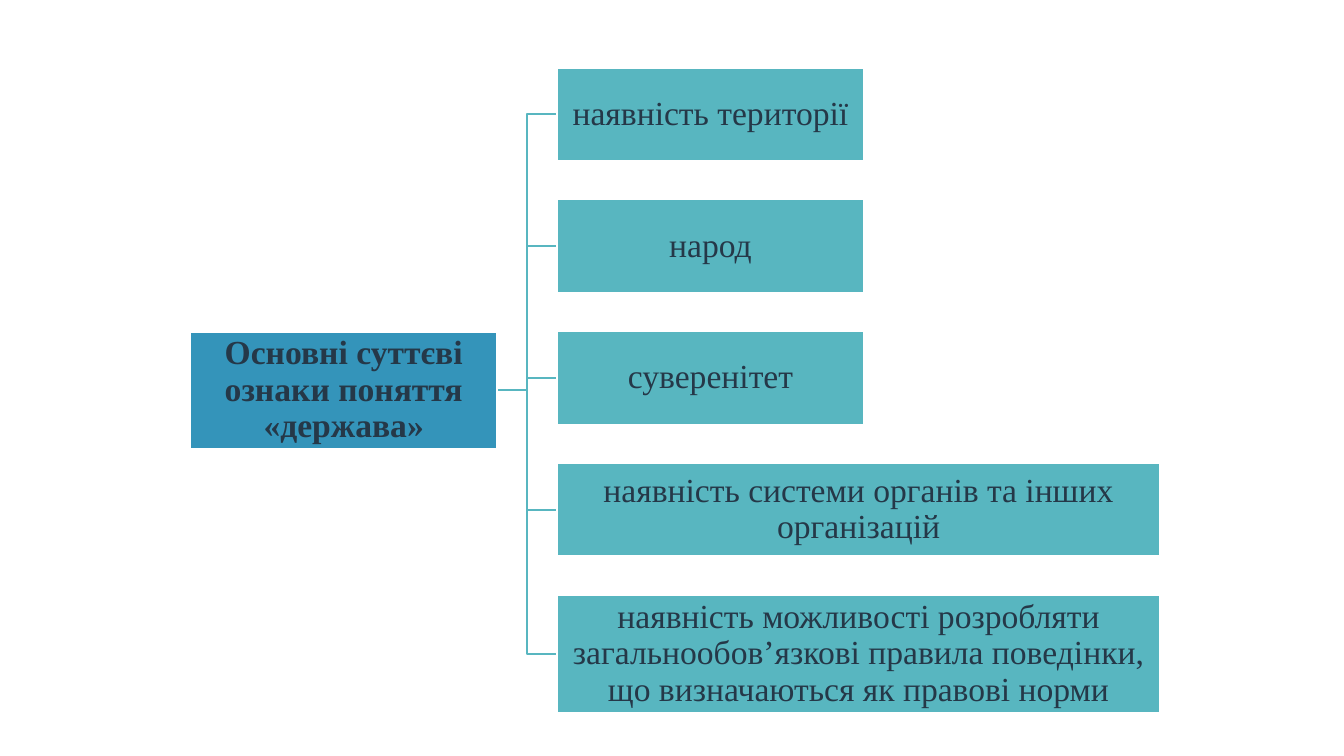
from pptx import Presentation
from pptx.dml.color import RGBColor
from pptx.enum.shapes import MSO_SHAPE as Shape
from pptx.enum.text import MSO_ANCHOR as Anchor, PP_ALIGN as Align
from pptx.util import Pt

ROOT = "Основні суттєві ознаки поняття «держава»"
# text, width, height
SIGNS = [
    ("наявність території", 219, 67),
    ("народ", 219, 67),
    ("суверенітет", 219, 67),
    ("наявність системи органів та інших організацій", 430.5, 67),
    ("наявність можливості розробляти загальнообов’язкові правила поведінки, "
     "що визначаються як правові норми", 430.5, 85),
]

BLUE = RGBColor(0x34, 0x94, 0xBA)
TEAL = RGBColor(0x58, 0xB6, 0xC0)
DARK = RGBColor(0x25, 0x38, 0x48)
WHITE = RGBColor(0xFF, 0xFF, 0xFF)

ROOT_X, ROOT_Y, ROOT_W, ROOT_H = 136, 237, 219, 83.5
SIGN_X, SIGN_Y, GAP = 398, 48.25, 27.1


def add_box(slide, text, x, y, w, h, fill, bold=False):
    box = slide.shapes.add_shape(Shape.RECTANGLE, Pt(x), Pt(y), Pt(w), Pt(h))
    box.shadow.inherit = False
    box.fill.solid()
    box.fill.fore_color.rgb = fill
    box.line.color.rgb = WHITE
    box.line.width = Pt(1.5)
    frame = box.text_frame
    frame.word_wrap = True
    frame.vertical_anchor = Anchor.MIDDLE
    frame.margin_left = frame.margin_right = Pt(1.5)
    frame.margin_top = frame.margin_bottom = Pt(1.5)
    para = frame.paragraphs[0]
    para.alignment = Align.CENTER
    para.line_spacing = 0.9
    run = para.add_run()
    run.text = text
    font = run.font
    font.name = "Times New Roman"
    font.size = Pt(24)
    font.bold = bold
    font.color.rgb = DARK


def add_branch(slide, y):
    """Draw the stepped line from the root box to a sign centred at y."""
    start = ROOT_X + ROOT_W
    mid = (start + SIGN_X) / 2
    root_mid = ROOT_Y + ROOT_H / 2
    path = slide.shapes.build_freeform(Pt(start), Pt(root_mid))
    points = [(mid, root_mid), (mid, y), (SIGN_X, y)]
    path.add_line_segments([(Pt(a), Pt(b)) for a, b in points], close=False)
    line = path.convert_to_shape()
    line.shadow.inherit = False
    line.fill.background()
    line.line.color.rgb = TEAL
    line.line.width = Pt(1.5)


def main():
    deck = Presentation()
    deck.slide_width, deck.slide_height = Pt(960), Pt(540)
    slide = deck.slides.add_slide(deck.slide_layouts[6])

    tops = []
    y = SIGN_Y
    for _, _, h in SIGNS:
        tops.append(y)
        y += h + GAP

    for (_, _, h), top in zip(SIGNS, tops):
        add_branch(slide, top + h / 2)
    add_box(slide, ROOT, ROOT_X, ROOT_Y, ROOT_W, ROOT_H, BLUE, bold=True)
    for (text, w, h), top in zip(SIGNS, tops):
        add_box(slide, text, SIGN_X, top, w, h, TEAL)

    deck.save("out.pptx")


if __name__ == "__main__":
    main()
